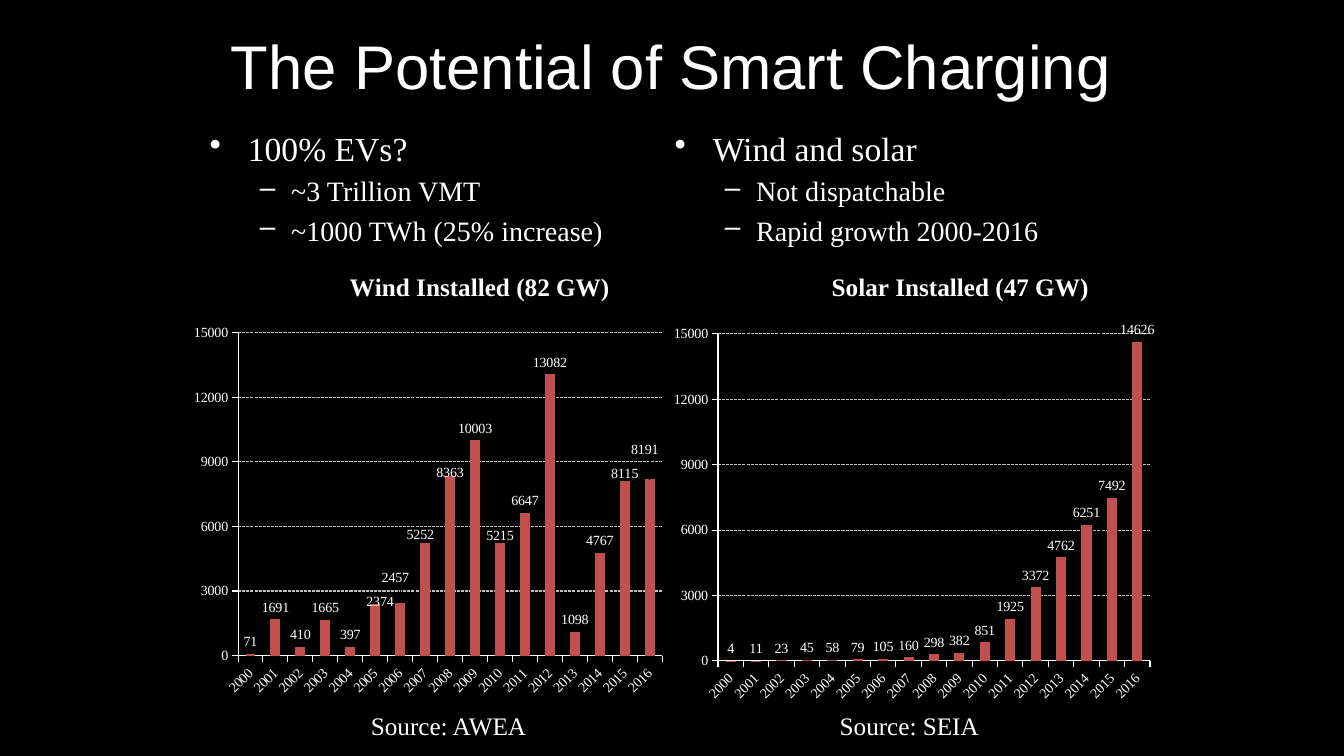
from dataclasses import dataclass

from lxml.etree import SubElement
from pptx import Presentation
from pptx.chart.data import CategoryChartData
from pptx.dml.color import RGBColor
from pptx.enum.chart import XL_CHART_TYPE, XL_LABEL_POSITION, XL_TICK_MARK
from pptx.enum.dml import MSO_LINE
from pptx.enum.text import MSO_ANCHOR, PP_ALIGN
from pptx.oxml import parse_xml
from pptx.oxml.ns import nsdecls, qn
from pptx.util import Inches, Pt


@dataclass(frozen=True)
class Theme:
    background: RGBColor = RGBColor(0, 0, 0)
    text: RGBColor = RGBColor(255, 255, 255)
    bar: RGBColor = RGBColor(0xC0, 0x50, 0x4D)
    grid: RGBColor = RGBColor(0xBF, 0xBF, 0xBF)
    title_font: str = "Arial"
    body_font: str = "Times New Roman"
    title_size: int = 44
    bullet_size: int = 24
    sub_bullet_size: int = 20
    source_size: int = 18
    chart_title_size: int = 18
    chart_size: int = 10


THEME = Theme()
YEARS = [str(year) for year in range(2000, 2017)]
WIND = [71, 1691, 410, 1665, 397, 2374, 2457, 5252, 8363, 10003,
        5215, 6647, 13082, 1098, 4767, 8115, 8191]
SOLAR = [4, 11, 23, 45, 58, 79, 105, 160, 298, 382,
         851, 1925, 3372, 4762, 6251, 7492, 14626]
# Label shifts as fractions of the chart: point index -> (x, y)
WIND_LABEL_SHIFTS = {5: (0.01, 0.02), 6: (-0.01, -0.03), 7: (-0.01, 0.01),
                     8: (0, 0.02), 10: (0, 0.01), 15: (0, 0.01),
                     16: (-0.01, -0.04)}
BULLETS = [(0, "100% EVs?"), (1, "~3 Trillion VMT"),
           (1, "~1000 TWh (25% increase)"), (0, "Wind and solar"),
           (1, "Not dispatchable"), (1, "Rapid growth 2000-2016")]
# Bullet character, left indent, hanging indent and size per level
LEVELS = [("•", 0.38, 0.38, THEME.bullet_size),
          ("–", 0.81, 0.31, THEME.sub_bullet_size)]


def style_font(font, size, name=THEME.body_font, bold=False):
    font.size, font.name, font.bold = Pt(size), name, bold
    font.color.rgb = THEME.text


def write(p, text, size, name=THEME.body_font, bold=False, align=None):
    r = p.add_run()
    r.text = text
    style_font(r.font, size, name, bold)
    p.alignment = align


def add_title(s, text):
    title = s.shapes.title
    title.left, title.top = Inches(1.92), Inches(0.23)
    title.width, title.height = Inches(9.48), Inches(0.83)
    title.text_frame.vertical_anchor = MSO_ANCHOR.MIDDLE
    write(title.text_frame.paragraphs[0], text, THEME.title_size,
          name=THEME.title_font, align=PP_ALIGN.CENTER)


def add_bullets(s, items):
    sp = s.shapes.add_textbox(Inches(1.98), Inches(1.22),
                              Inches(9.42), Inches(1.45))
    tf = sp.text_frame
    tf.word_wrap = True
    tf._txBody.bodyPr.set("numCol", "2")
    for i, (level, text) in enumerate(items):
        p = tf.add_paragraph() if i else tf.paragraphs[0]
        char, indent, hanging, size = LEVELS[level]
        p.level = level
        write(p, text, size)
        p.space_before = Pt(size * 0.2)
        pPr = p._p.get_or_add_pPr()
        pPr.set("marL", str(Inches(indent)))
        pPr.set("indent", str(-Inches(hanging)))
        SubElement(pPr, qn("a:buChar")).set("char", char)


def add_source(s, text, left, width):
    sp = s.shapes.add_textbox(Inches(left), Inches(7),
                              Inches(width), Inches(0.4))
    sp.text_frame.word_wrap = False
    write(sp.text_frame.paragraphs[0], text, THEME.source_size)


def make_layout(x, y, w=None, h=None, inner=False):
    target = '<c:layoutTarget val="inner"/>' if inner else ""
    modes = "" if w is None and not inner and h is None and y is None else (
        '<c:xMode val="edge"/><c:yMode val="edge"/>' if inner else "")
    size = f'<c:w val="{w}"/><c:h val="{h}"/>' if w else ""
    return parse_xml(
        f'<c:layout {nsdecls("c")}><c:manualLayout>{target}{modes}'
        f'<c:x val="{x}"/><c:y val="{y}"/>{size}</c:manualLayout></c:layout>')


def place_title(chart):
    title = chart.chart_title._element
    for old in title.findall(qn("c:layout")):
        title.remove(old)
    layout = make_layout(0.33, 0.015)
    manual = layout[0]
    for i, tag in enumerate(("c:xMode", "c:yMode")):
        mode = SubElement(manual, qn(tag))
        mode.set("val", "edge")
        manual.insert(i, mode)
    title.find(qn("c:tx")).addnext(layout)


def place_plot(chart):
    area = chart._chartSpace.chart.plotArea
    for old in area.findall(qn("c:layout")):
        area.remove(old)
    area.insert(0, make_layout(0.11, 0.164, 0.871, 0.726, inner=True))


def style_axis(axis):
    axis.major_tick_mark = XL_TICK_MARK.OUTSIDE
    axis.minor_tick_mark = XL_TICK_MARK.NONE
    axis.format.line.color.rgb = THEME.text
    axis.format.line.width = Pt(0.75)
    style_font(axis.tick_labels.font, THEME.chart_size)


def shift_label(series, index, x, y):
    label = series.points[index].data_label
    style_font(label.font, THEME.chart_size)
    label.position = XL_LABEL_POSITION.OUTSIDE_END
    dLbl = series._element.xpath(f"c:dLbls/c:dLbl[c:idx/@val={index}]")[0]
    dLbl.insert(1, make_layout(x, y))


def add_column_chart(s, title, values, left, width, height, shifts):
    data = CategoryChartData()
    data.categories = YEARS
    data.add_series("Series 1", values)
    chart = s.shapes.add_chart(
        XL_CHART_TYPE.COLUMN_CLUSTERED, Inches(left), Inches(2.58),
        Inches(width), Inches(height), data).chart
    style_font(chart.font, THEME.chart_size)
    chart.has_legend = False
    chart.has_title = True
    write(chart.chart_title.text_frame.paragraphs[0], title,
          THEME.chart_title_size, bold=True)
    place_title(chart)
    place_plot(chart)

    # Axes
    style_axis(chart.category_axis)
    chart.category_axis._element.find(qn("c:txPr")).find(
        qn("a:bodyPr")).set("rot", "-2700000")
    axis = chart.value_axis
    style_axis(axis)
    axis.minimum_scale, axis.maximum_scale, axis.major_unit = 0, 15000, 3000
    grid = axis.major_gridlines.format.line
    grid.color.rgb, grid.width = THEME.grid, Pt(0.75)
    grid.dash_style = MSO_LINE.SQUARE_DOT

    # Bars and labels
    plot = chart.plots[0]
    plot.gap_width, plot.vary_by_categories = 150, False
    series = plot.series[0]
    series.format.fill.solid()
    series.format.fill.fore_color.rgb = THEME.bar
    labels = series.data_labels
    labels.show_value = True
    labels.position = XL_LABEL_POSITION.OUTSIDE_END
    style_font(labels.font, THEME.chart_size)
    for index, (x, y) in shifts.items():
        shift_label(series, index, x, y)


def main():
    prs = Presentation()
    prs.slide_width, prs.slide_height = Inches(13.33), Inches(7.5)
    s = prs.slides.add_slide(prs.slide_layouts[5])
    s.background.fill.solid()
    s.background.fill.fore_color.rgb = THEME.background

    # Heading and bullets
    add_title(s, "The Potential of Smart Charging")
    add_bullets(s, BULLETS)

    # Charts with their sources
    add_column_chart(s, "Solar Installed (47 GW)", SOLAR, 6.58, 4.92, 4.47, {})
    add_column_chart(s, "Wind Installed (82 GW)", WIND, 1.83, 4.83, 4.41,
                     WIND_LABEL_SHIFTS)
    add_source(s, "Source: AWEA", 3.58, 1.76)
    add_source(s, "Source: SEIA", 8.23, 1.6)
    prs.save("out.pptx")


if __name__ == "__main__":
    main()
